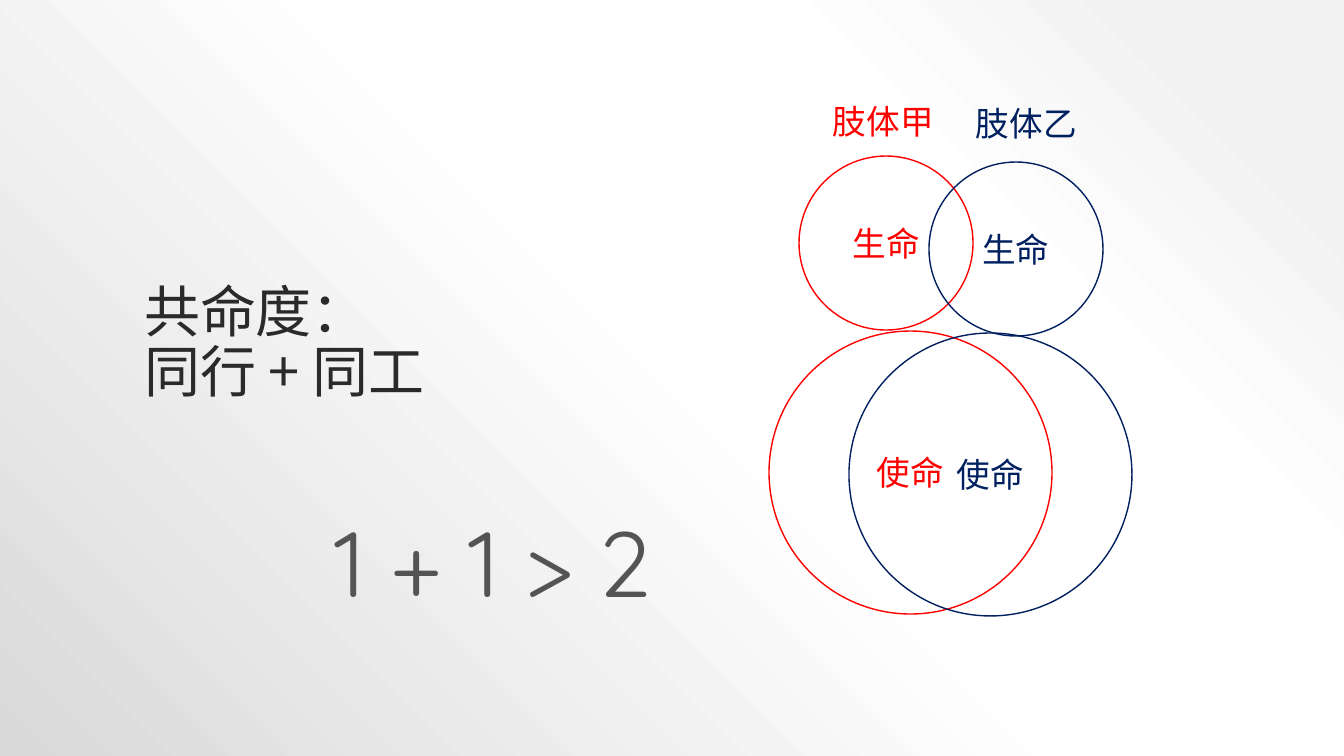
from lxml.etree import SubElement
from pptx import Presentation
from pptx.dml.color import RGBColor
from pptx.enum.shapes import MSO_SHAPE as Shape
from pptx.enum.text import MSO_ANCHOR as Anchor, MSO_AUTO_SIZE as AutoSize, PP_ALIGN as Align
from pptx.oxml.ns import qn
from pptx.util import Pt

SCALE = 914400 / 100.8
COLORS = {"red": "FF0000", "navy": "002060", "title": "2A2A2A", "gray": "545454"}
BACKDROP = [(10, "F2F2F2"), (28, "FFFFFF"), (48, "FFFFFF"), (100, "D9D9D9")]


def px(*lengths):
    return [round(length * SCALE) for length in lengths]


def write(box, text, size=24, color="red", font="Quicksand", align=Align.LEFT,
          anchor=Anchor.TOP, spacing=0.9, fit=AutoSize.NONE, wrap=True):
    frame = box.text_frame
    frame.word_wrap = wrap
    frame.auto_size = fit
    frame.vertical_anchor = anchor
    para = frame.paragraphs[0]
    para.alignment = align
    para.line_spacing = spacing
    for index, line in enumerate(text.split("\n")):
        if index:
            para.add_line_break()
        span = para.add_run()
        span.text = line
        span.font.size = Pt(size)
        span.font.name = font
        span.font.color.rgb = RGBColor.from_string(COLORS[color])
        SubElement(span.font._element, qn("a:ea"), typeface=font)


deck = Presentation()
deck.slide_width, deck.slide_height = px(1344, 756)
page = deck.slides.add_slide(deck.slide_layouts[5])

page.background.fill.gradient()
gradient = page.element.find(".//" + qn("a:gradFill"))
for child in list(gradient):
    gradient.remove(child)
stops = SubElement(gradient, qn("a:gsLst"))
for position, color in BACKDROP:
    stop = SubElement(stops, qn("a:gs"), pos=str(position * 1000))
    SubElement(stop, qn("a:srgbClr"), val=color)
focus = SubElement(gradient, qn("a:path"), path="circle")
SubElement(focus, qn("a:fillToRect"), l="100000", b="100000")

title = page.shapes.title
title.left, title.top, title.width, title.height = px(134, 256, 443, 154)
write(title, "共命度：\n同行 + 同工", size=40, color="title",
      font="Noto Sans CJK SC", anchor=Anchor.BOTTOM)

circles = [
    ("生命", "red", 799, 156, 174),
    ("使命", "red", 769, 331, 283),
    ("生命", "navy", 929, 162, 174),
    ("使命", "navy", 849, 333, 283),
]
for text, color, left, top, size in circles:
    circle = page.shapes.add_shape(Shape.OVAL, *px(left, top, size, size))
    circle.shadow.inherit = False
    circle.fill.background()
    circle.line.color.rgb = RGBColor.from_string(COLORS[color])
    circle.line.width = Pt(1)
    write(circle, text, color=color, align=Align.CENTER, anchor=Anchor.MIDDLE, spacing=1.0)

labels = [
    ("肢体甲", "red", 24, 823, 100, 158, 46),
    ("肢体乙", "navy", 24, 966, 102, 158, 46),
    ("1 + 1 > 2", "gray", 66, 325, 513, 405, 111),
]
for text, color, size, left, top, width, height in labels:
    label = page.shapes.add_textbox(*px(left, top, width, height))
    write(label, text, size=size, color=color, fit=AutoSize.SHAPE_TO_FIT_TEXT)

deck.save("out.pptx")
